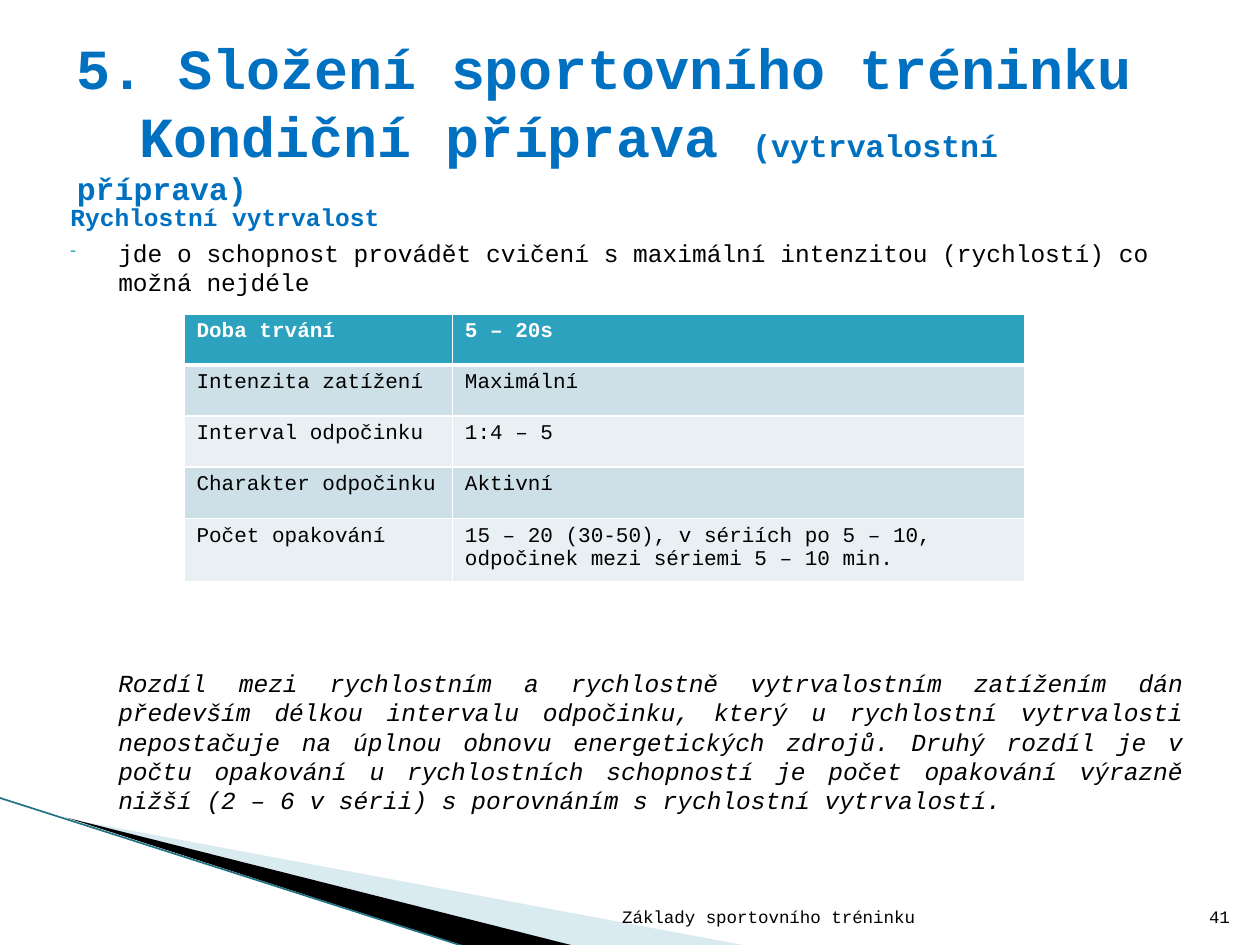
from lxml import etree
from pptx import Presentation
from pptx import util as u
from pptx.dml.color import RGBColor
from pptx.enum import shapes, text
from pptx.oxml import ns

Inches, Pt = u.Inches, u.Pt
BLUE = RGBColor(0x00, 0x70, 0xC0)
BLACK = RGBColor(0x00, 0x00, 0x00)
WHITE = RGBColor(0xFF, 0xFF, 0xFF)
TEAL = RGBColor(0x2D, 0xA2, 0xBF)
DARK_TEAL = RGBColor(0x1F, 0x73, 0x85)
PALE = RGBColor(0xA0, 0xCB, 0xDC)
BAND_DARK = RGBColor(0xCD, 0xE0, 0xE8)
BAND_LIGHT = RGBColor(0xE8, 0xF0, 0xF4)
FONT = "Courier New"

# Content
TITLE = [("5. Složení sportovního tréninku\v\tKondiční příprava ", 32.4),
         ("(vytrvalostní příprava)", 18)]
BODY = [  # wording, font format, paragraph format, first-line indent, bullet
    ("Rychlostní vytrvalost", {"bold": True, "color": BLUE}, {}, -0.38, None),
    ("jde o schopnost provádět cvičení s maximální intenzitou (rychlostí) "
     "co možná nejdéle", {}, {"space_before": Pt(4)}, -0.38, "-"),
    ("Rozdíl mezi rychlostním a rychlostně vytrvalostním zatížením dán "
     "především délkou intervalu odpočinku, který u rychlostní vytrvalosti "
     "nepostačuje na úplnou obnovu energetických zdrojů. Druhý rozdíl je v "
     "počtu opakování u rychlostních schopností je počet opakování výrazně "
     "nižší (2 – 6 v sérii) s porovnáním s rychlostní vytrvalostí.",
     {"italic": True},
     {"space_before": Pt(212), "alignment": text.PP_ALIGN.JUSTIFY}, 0, None),
]
TABLE = [
    ("Doba trvání", "5 – 20s"),
    ("Intenzita zatížení", "Maximální"),
    ("Interval odpočinku", "1:4 – 5"),
    ("Charakter odpočinku", "Aktivní"),
    ("Počet opakování", "15 – 20 (30-50), v sériích po 5 – 10, "
                        "odpočinek mezi sériemi 5 – 10 min."),
]
COLUMN_WIDTHS = (2.13, 4.54)
FOOTERS = [("Základy sportovního tréninku", 4.79, 2.57), ("41", 9.46, 0.4)]
WEDGES = [  # points, colour, opacity in percent
    ([(0.55, 6.5), (5.95, 7.51), (4.56, 7.51)], PALE, 40),
    ([(0.53, 6.49), (4.57, 7.51), (3.72, 7.52)], BLACK, 100),
]


def style(font, size, color=BLACK, **values):
    for name, value in {"name": FONT, "size": Pt(size), **values}.items():
        setattr(font, name, value)
    font.color.rgb = color


def place(shape, left, top, width, height):
    for name, value in zip(("left", "top", "width", "height"),
                           (left, top, width, height)):
        setattr(shape, name, Inches(value))


def child(parent, tag, **attributes):
    return etree.SubElement(parent, ns.qn(tag), **attributes)


def border(cell, side, points):
    line = child(cell._tc.get_or_add_tcPr(), "a:" + side, w=str(Pt(points)))
    child(child(line, "a:solidFill"), "a:srgbClr", val=str(WHITE))


deck = Presentation()
deck.slide_width, deck.slide_height = Inches(10), Inches(7.5)
page = deck.slides.add_slide(deck.slide_layouts[5])

# Corner decoration
for points, color, opacity in WEDGES:
    start, *rest = [(Inches(x), Inches(y)) for x, y in points]
    builder = page.shapes.build_freeform(*start)
    builder.add_line_segments(rest, close=True)
    wedge = builder.convert_to_shape()
    wedge.shadow.inherit = False
    wedge.fill.solid()
    wedge.fill.fore_color.rgb = color
    wedge.line.fill.background()
    if opacity < 100:
        shade = wedge._element.spPr.find(".//" + ns.qn("a:srgbClr"))
        child(shade, "a:alpha", val=str(opacity * 1000))
edge = page.shapes.add_connector(shapes.MSO_CONNECTOR.STRAIGHT, Inches(-0.01),
                                 Inches(6.33), Inches(3.71), Inches(7.52))
edge.line.color.rgb = DARK_TEAL
edge.line.width = Pt(0.95)
child(edge._element.spPr, "a:effectLst")

# Title
title = page.shapes.title
place(title, 0.51, 0.21, 9, 1.25)
frame = title.text_frame
frame.word_wrap = True
frame.auto_size = text.MSO_AUTO_SIZE.NONE
frame.vertical_anchor = text.MSO_ANCHOR.TOP
para = frame.paragraphs[0]
para.alignment = text.PP_ALIGN.LEFT
for index, (wording, size) in enumerate(TITLE):
    for part, piece in enumerate(wording.split("\v")):
        if part:
            para.add_line_break()
        span = para.add_run()
        span.text = piece
        style(span.font, size, BLUE, bold=True)

# Body text
box = page.shapes.add_textbox(0, 0, 0, 0)
place(box, 0.35, 1.55, 9.15, 5.35)
frame = box.text_frame
frame.word_wrap = True
for index, (wording, font, layout, indent, bullet) in enumerate(BODY):
    para = frame.add_paragraph() if index else frame.paragraphs[0]
    for name, value in {"line_spacing": Pt(16.8), **layout}.items():
        setattr(para, name, value)
    properties = para._p.get_or_add_pPr()
    properties.set("marL", str(Inches(0.49)))
    properties.set("indent", str(Inches(indent)))
    if bullet:
        child(child(properties, "a:buClr"), "a:srgbClr", val=str(TEAL))
        child(properties, "a:buSzPct", val="68000")
        child(properties, "a:buChar", char=bullet)
    span = para.add_run()
    span.text = wording
    style(span.font, 14, **font)

# Table
table = page.shapes.add_table(len(TABLE), 2, Inches(1.46), Inches(2.49),
                              Inches(6.67), Inches(2.03)).table
for column, width in zip(table.columns, COLUMN_WIDTHS):
    column.width = Inches(width)
for r, row in enumerate(TABLE):
    header = r == 0
    for c, wording in enumerate(row):
        cell = table.cell(r, c)
        cell.text = wording
        style(cell.text_frame.paragraphs[0].runs[0].font, 12,
              WHITE if header else BLACK, bold=header)
        for side in ("lnL", "lnR", "lnT", "lnB"):
            thick = (r, side) in ((0, "lnB"), (1, "lnT"))
            border(cell, side, 3 if thick else 1)
        cell.fill.solid()
        cell.fill.fore_color.rgb = (TEAL if header else
                                    BAND_DARK if r % 2 else BAND_LIGHT)

# Footer and page number
for wording, left, width in FOOTERS:
    box = page.shapes.add_textbox(0, 0, 0, 0)
    place(box, left, 7.01, width, 0.4)
    frame = box.text_frame
    frame.word_wrap = True
    frame.vertical_anchor = text.MSO_ANCHOR.BOTTOM
    para = frame.paragraphs[0]
    para.alignment = text.PP_ALIGN.RIGHT
    span = para.add_run()
    span.text = wording
    style(span.font, 10)

deck.save("out.pptx")
